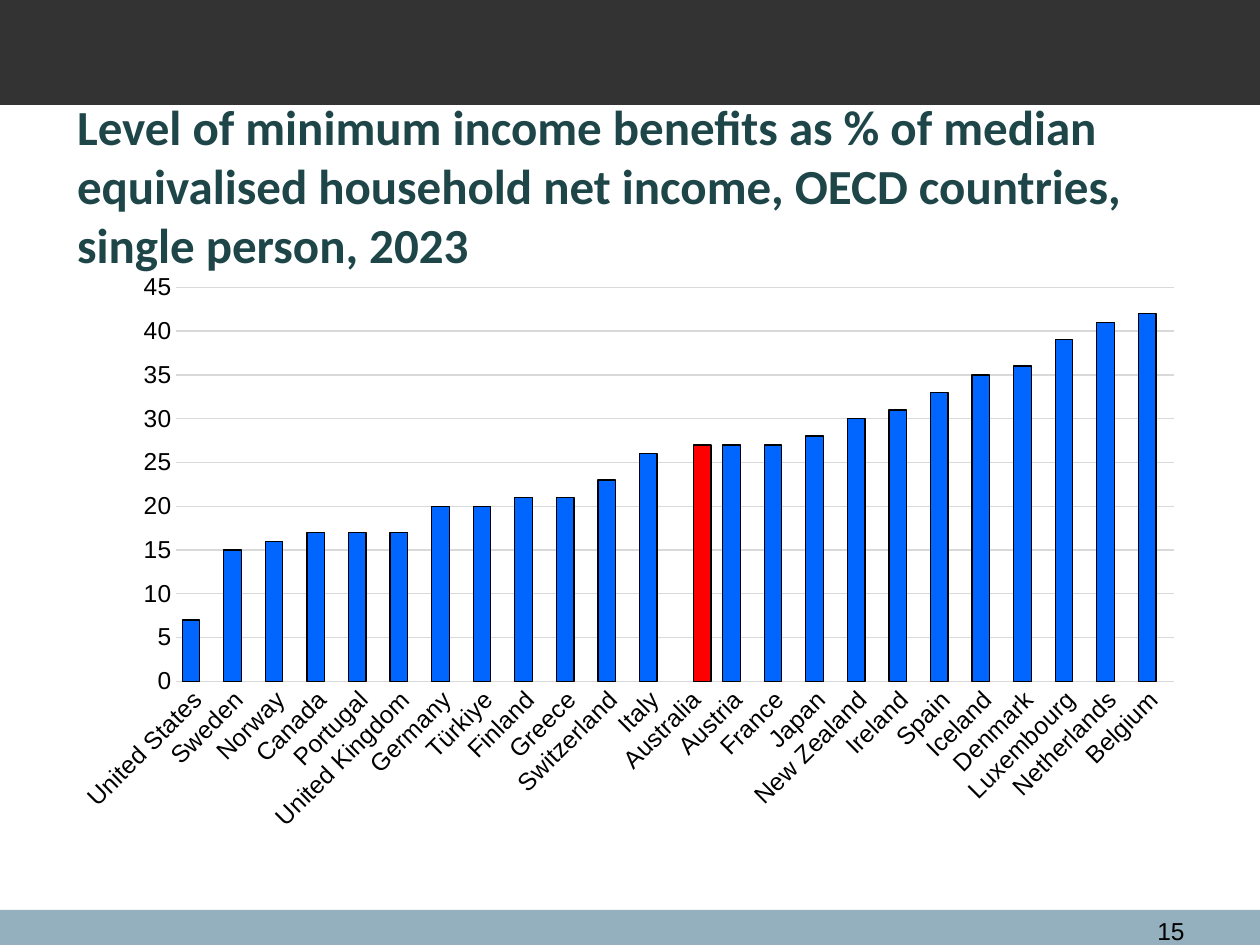
from lxml import etree
from pptx import Presentation
from pptx import util as u
from pptx.chart.data import CategoryChartData
from pptx.dml.color import RGBColor
from pptx.enum import chart as charts, shapes, text
from pptx.oxml import parse_xml
from pptx.oxml.ns import nsdecls, qn

BLACK = RGBColor(0x00, 0x00, 0x00)
CHARCOAL = RGBColor(0x33, 0x33, 0x33)
STEEL = RGBColor(0x94, 0xB0, 0xBE)
TEAL = RGBColor(0x1E, 0x46, 0x49)
GRID = RGBColor(0xD9, 0xD9, 0xD9)
BLUE = RGBColor(0x00, 0x66, 0xFF)
RED = RGBColor(0xFF, 0x00, 0x00)

HIGHLIGHT = "Australia"
BENEFITS = {
    "United States": 7, "Sweden": 15, "Norway": 16, "Canada": 17,
    "Portugal": 17, "United Kingdom": 17, "Germany": 20, "Türkiye": 20,
    "Finland": 21, "Greece": 21, "Switzerland": 23, "Italy": 26,
    "Australia": 27, "Austria": 27, "France": 27, "Japan": 28,
    "New Zealand": 30, "Ireland": 31, "Spain": 33, "Iceland": 35,
    "Denmark": 36, "Luxembourg": 39, "Netherlands": 41, "Belgium": 42,
}


class SlideBuilder:
    body_font = "Arial"
    title_font = "Calibri"
    label_size = u.Pt(14)
    line_width = u.Pt(0.75)

    def __init__(self, page):
        self.page = page

    def band(self, top, height, color):
        shape = self.page.shapes.add_shape(
            shapes.MSO_SHAPE.RECTANGLE, u.Pt(0), u.Pt(top), u.Pt(720), u.Pt(height))
        shape.shadow.inherit = False
        shape.fill.solid()
        shape.fill.fore_color.rgb = color
        shape.line.fill.background()

    def text(self, wording, place, font, size, color, bold=False,
             align=text.PP_ALIGN.LEFT, anchor=text.MSO_ANCHOR.TOP):
        box = self.page.shapes.add_textbox(*map(u.Pt, place))
        frame = box.text_frame
        frame.word_wrap = True
        frame.vertical_anchor = anchor
        para = frame.paragraphs[0]
        para.alignment = align
        span = para.add_run()
        span.text = wording
        span.font.name = font
        span.font.size = size
        span.font.bold = bold
        span.font.color.rgb = color

    def style_font(self, font, size):
        font.name = self.body_font
        font.size = size
        font.color.rgb = BLACK

    def style_line(self, line, color):
        line.color.rgb = color
        line.width = self.line_width

    def style_axis(self, axis):
        axis.major_tick_mark = charts.XL_TICK_MARK.NONE
        axis.minor_tick_mark = charts.XL_TICK_MARK.NONE
        self.style_font(axis.tick_labels.font, self.label_size)

    def place_plot(self, chart, **fractions):
        area = chart._chartSpace.chart.plotArea
        for layout in area.findall(qn("c:layout")):
            area.remove(layout)
        layout = parse_xml(
            f'<c:layout {nsdecls("c")}><c:manualLayout><c:layoutTarget val="inner"/>'
            '<c:xMode val="edge"/><c:yMode val="edge"/></c:manualLayout></c:layout>')
        for key, value in fractions.items():
            etree.SubElement(layout[0], qn(f"c:{key}")).set("val", str(value))
        area.insert(0, layout)

    def column_chart(self, categories, series, place):
        data = CategoryChartData()
        data.categories = categories
        for name, values, _ in series:
            data.add_series(name, values)
        chart = self.page.shapes.add_chart(
            charts.XL_CHART_TYPE.COLUMN_CLUSTERED, *map(u.Pt, place), data).chart
        chart.has_legend = False
        chart.has_title = False
        self.style_font(chart.font, u.Pt(10))
        self.place_plot(chart, x=0.1, y=0.04, w=0.88, h=0.68)

        plot = chart.plots[0]
        plot.vary_by_categories = False
        plot.gap_width = 66
        plot.overlap = 29
        for bars, (_, _, color) in zip(plot.series, series):
            bars.invert_if_negative = False
            bars.format.fill.solid()
            bars.format.fill.fore_color.rgb = color
            self.style_line(bars.format.line, BLACK)

        names, scale = chart.category_axis, chart.value_axis
        self.style_axis(names)
        self.style_axis(scale)
        self.style_line(names.format.line, GRID)
        label_body = names._element.find(qn("c:txPr")).find(qn("a:bodyPr"))
        label_body.set("rot", "-2700000")
        scale.minimum_scale = 0
        scale.maximum_scale = 45
        scale.major_unit = 5
        scale.format.line.fill.background()
        scale.has_major_gridlines = True
        self.style_line(scale.major_gridlines.format.line, GRID)


def main():
    deck = Presentation()
    deck.slide_width, deck.slide_height = u.Pt(720), u.Pt(540)
    builder = SlideBuilder(deck.slides.add_slide(deck.slide_layouts[6]))

    builder.band(520, 20, STEEL)
    builder.band(0, 60, CHARCOAL)
    builder.text(
        "Level of minimum income benefits as % of median equivalised "
        "household net income, OECD countries, single person, 2023",
        (37, 60.5, 648, 90), builder.title_font, u.Pt(28), TEAL,
        bold=True, anchor=text.MSO_ANCHOR.MIDDLE)
    builder.text("15", (638, 520, 46, 17), builder.body_font, builder.label_size,
                 BLACK, align=text.PP_ALIGN.RIGHT)

    others = [None if name == HIGHLIGHT else value for name, value in BENEFITS.items()]
    marked = [value if name == HIGHLIGHT else None for name, value in BENEFITS.items()]
    builder.column_chart(
        list(BENEFITS),
        [("Series 1", others, BLUE), ("Series 2", marked, RED)],
        (36, 151, 648, 331))
    deck.save("out.pptx")


if __name__ == "__main__":
    main()
